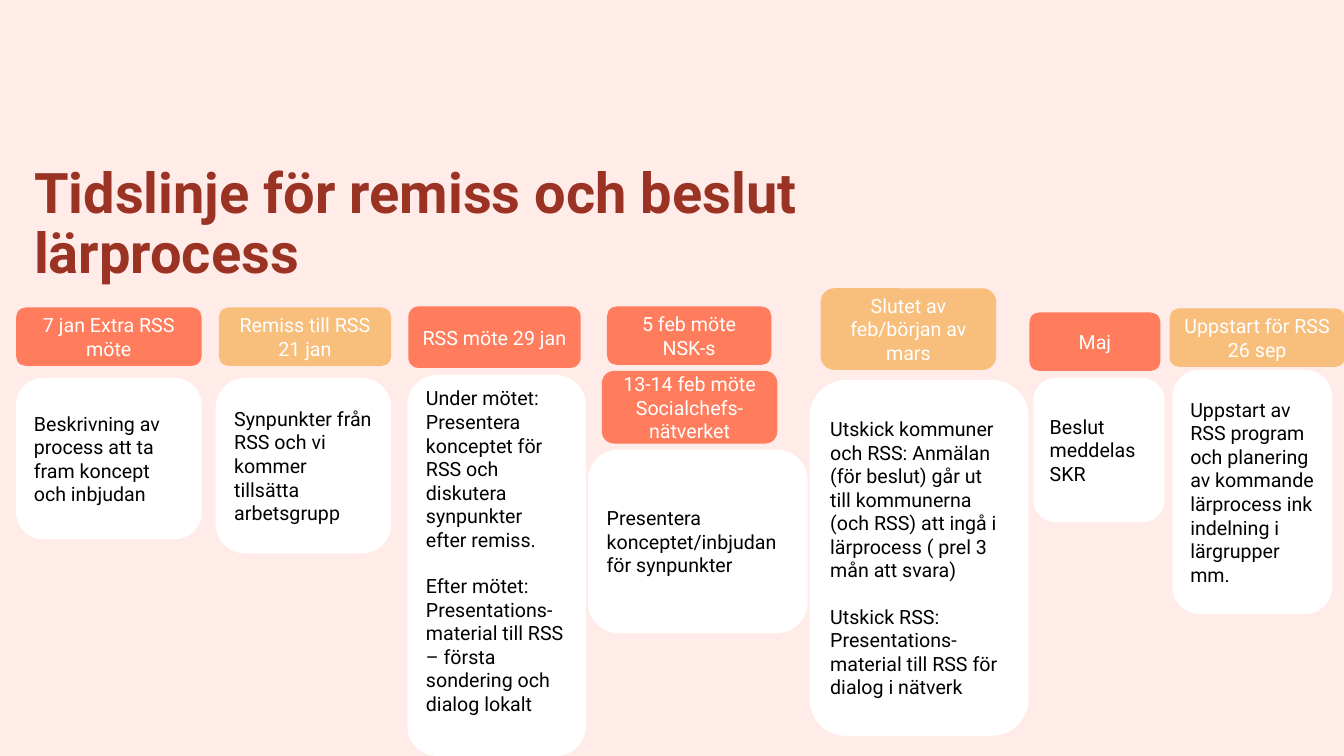
from dataclasses import dataclass

from pptx import Presentation
from pptx.dml.color import RGBColor
from pptx.enum.shapes import MSO_SHAPE
from pptx.enum.text import MSO_ANCHOR, PP_ALIGN
from pptx.slide import Slide
from pptx.text.text import TextFrame
from pptx.util import Inches, Pt


@dataclass(frozen=True)
class Theme:
    font: str = "Roboto"
    title_size: int = 40
    body_size: int = 14
    background: str = "FFEBE8"
    title: str = "9A3324"
    coral: str = "FF7C5D"
    amber: str = "F8BE7C"
    white: str = "FFFFFF"
    black: str = "000000"


@dataclass(frozen=True)
class Box:
    left: float
    top: float
    width: float
    height: float


@dataclass(frozen=True)
class Label:
    """Coloured date label with centred text."""
    box: Box
    fill: str
    lines: tuple[str, ...]


@dataclass(frozen=True)
class Card:
    """White card that describes a step."""
    box: Box
    paragraphs: tuple[str, ...]
    bottom_inset: float = 0.05


THEME = Theme()
PARAGRAPH_GAP = 16.4  # one line of body text

LABELS = (
    Label(Box(0.16, 3.05, 1.84, 0.58), THEME.coral, ("7 jan Extra RSS möte",)),
    Label(Box(2.17, 3.05, 1.71, 0.58), THEME.amber, ("Remiss till RSS 21 jan",)),
    Label(Box(4.05, 3.04, 1.71, 0.61), THEME.coral, ("RSS möte 29 jan",)),
    Label(Box(6.02, 3.04, 1.63, 0.58), THEME.coral, ("5 feb möte NSK-s",)),
    Label(Box(5.97, 3.68, 1.74, 0.72), THEME.coral,
          ("13-14 feb möte Socialchefs-nätverket",)),
    Label(Box(8.14, 2.86, 1.74, 0.81), THEME.amber,
          ("Slutet av feb/början av mars",)),
    Label(Box(10.21, 3.1, 1.3, 0.58), THEME.coral, ("Maj",)),
    Label(Box(11.6, 3.06, 1.74, 0.58), THEME.amber,
          ("Uppstart för RSS", "26 sep")),
)

CARDS = (
    Card(Box(0.16, 3.75, 1.84, 1.6),
         ("Beskrivning av process att ta fram koncept och inbjudan",)),
    Card(Box(2.14, 3.75, 1.74, 1.74),
         ("Synpunkter från RSS och vi kommer tillsätta arbetsgrupp",)),
    Card(Box(4.04, 3.72, 1.77, 3.78),
         ("Under mötet: Presentera konceptet för RSS och diskutera "
          "synpunkter efter remiss.",
          "Efter mötet: Presentations-material till RSS – första "
          "sondering och dialog lokalt"), bottom_inset=0.34),
    Card(Box(5.83, 4.46, 2.18, 1.82),
         ("Presentera konceptet/inbjudan för synpunkter",)),
    Card(Box(8.03, 3.77, 2.17, 3.53),
         ("Utskick kommuner och RSS: Anmälan (för beslut) går ut till "
          "kommunerna (och RSS) att ingå i lärprocess ( prel 3 mån att svara)",
          "Utskick RSS: Presentations-material till RSS för dialog i nätverk")),
    Card(Box(10.25, 3.75, 1.3, 1.43), ("Beslut meddelas SKR",)),
    Card(Box(11.63, 3.67, 1.58, 2.42),
         ("Uppstart av RSS program och planering av kommande lärprocess ink "
          "indelning i lärgrupper mm.",)),
)


def inches(box: Box) -> tuple[Inches, ...]:
    return tuple(Inches(v) for v in (box.left, box.top, box.width, box.height))


def write(tf: TextFrame, paragraphs: tuple[str, ...], size: int, color: str,
          bold: bool = False, gap: float = 0, **paragraph_format) -> None:
    """Fill a text frame with equally formatted paragraphs."""
    tf.word_wrap = True
    tf.vertical_anchor = MSO_ANCHOR.MIDDLE
    font_format = {"name": THEME.font, "size": Pt(size), "bold": bold}
    for i, text in enumerate(paragraphs):
        p = tf.add_paragraph() if i else tf.paragraphs[0]
        for name, value in paragraph_format.items():
            setattr(p, name, value)
        if i and gap:
            p.space_before = Pt(gap)
        r = p.add_run()
        r.text = text
        for name, value in font_format.items():
            setattr(r.font, name, value)
        r.font.color.rgb = RGBColor.from_string(color)


def add_rounded(s: Slide, box: Box, fill: str) -> TextFrame:
    sp = s.shapes.add_shape(MSO_SHAPE.ROUNDED_RECTANGLE, *inches(box))
    sp.shadow.inherit = False
    sp.fill.solid()
    sp.fill.fore_color.rgb = RGBColor.from_string(fill)
    sp.line.fill.background()
    return sp.text_frame


def add_label(s: Slide, label: Label) -> None:
    tf = add_rounded(s, label.box, label.fill)
    write(tf, label.lines, THEME.body_size, THEME.white,
          alignment=PP_ALIGN.CENTER)


def add_card(s: Slide, card: Card) -> None:
    tf = add_rounded(s, card.box, THEME.white)
    tf.margin_bottom = Inches(card.bottom_inset)
    write(tf, card.paragraphs, THEME.body_size, THEME.black,
          gap=PARAGRAPH_GAP, alignment=PP_ALIGN.LEFT)


def main() -> None:
    prs = Presentation()
    prs.slide_width, prs.slide_height = Inches(13.33), Inches(7.5)
    s = prs.slides.add_slide(prs.slide_layouts[6])

    # Background
    s.background.fill.solid()
    s.background.fill.fore_color.rgb = RGBColor.from_string(THEME.background)

    # Title
    title = s.shapes.add_textbox(*inches(Box(0.24, 1.51, 9.33, 1.45)))
    write(title.text_frame, ("Tidslinje för remiss och beslut lärprocess",),
          THEME.title_size, THEME.title, bold=True, line_spacing=0.9)

    # Timeline
    for card in CARDS:
        add_card(s, card)
    for label in LABELS:
        add_label(s, label)

    prs.save("out.pptx")


if __name__ == "__main__":
    main()
